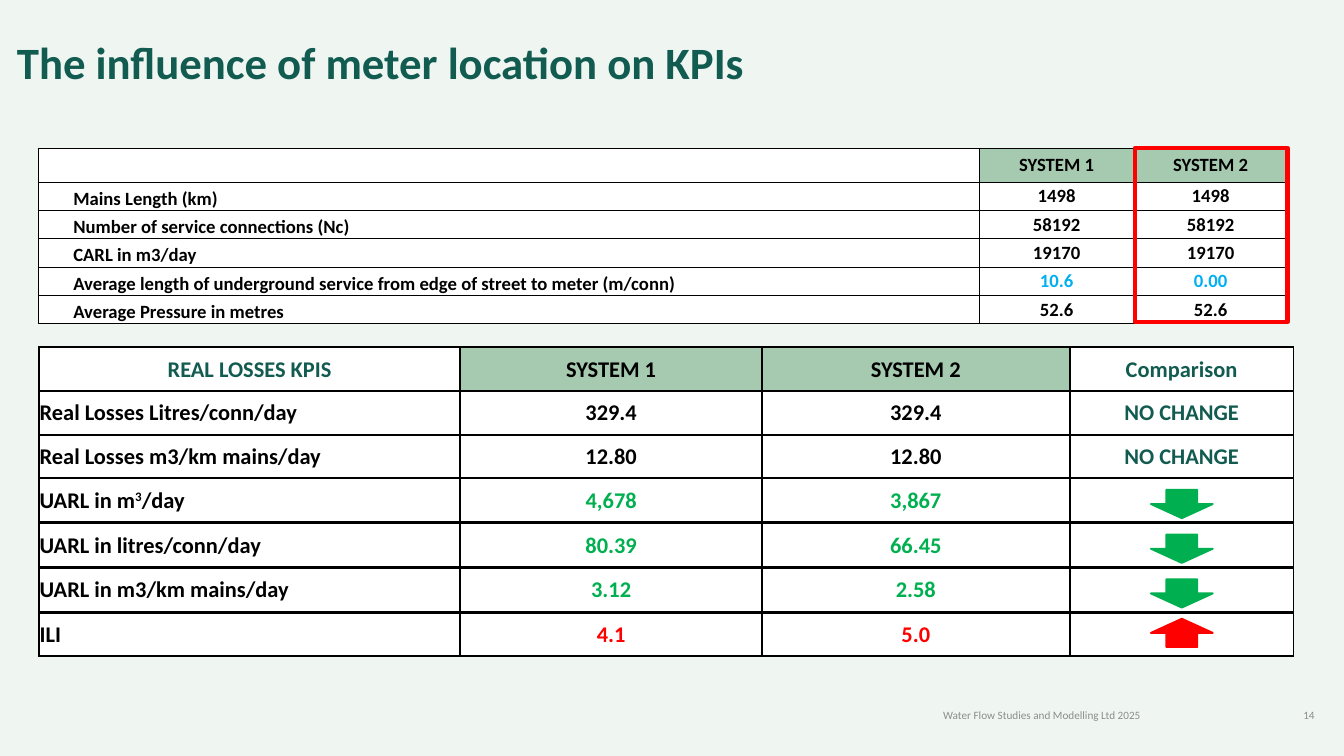
from lxml.etree import SubElement
from pptx import Presentation
from pptx.dml.color import RGBColor
from pptx.enum.shapes import MSO_SHAPE
from pptx.enum.text import MSO_ANCHOR, MSO_AUTO_SIZE, PP_ALIGN
from pptx.oxml.ns import qn
from pptx.util import Cm, Pt

DARK_GREEN, SAGE, MINT = "125B50", "A6CAB0", "EFF6F2"
GREEN, RED, BLUE = "00B050", "FF0000", "00B0F0"
BLACK, WHITE, GREY = "000000", "FFFFFF", "8C8C8C"


def rgb(code):
    return RGBColor.from_string(code)


class Deck:
    font = "Calibri"

    def __init__(self, width, height, background):
        self.presentation = Presentation()
        self.presentation.slide_width = Cm(width)
        self.presentation.slide_height = Cm(height)
        self.slide = self.presentation.slides.add_slide(self.presentation.slide_layouts[6])
        self.slide.background.fill.solid()
        self.slide.background.fill.fore_color.rgb = rgb(background)

    def style(self, paragraph, size, color, bold, align):
        paragraph.alignment = align
        paragraph.font.name = self.font
        paragraph.font.size = Pt(size)
        paragraph.font.bold = bold
        paragraph.font.color.rgb = rgb(color)

    def text(self, box, words, size, color, bold=False, align=PP_ALIGN.LEFT):
        frame = self.slide.shapes.add_textbox(*map(Cm, box)).text_frame
        frame.word_wrap = True
        frame.vertical_anchor = MSO_ANCHOR.MIDDLE
        frame.text = words
        self.style(frame.paragraphs[0], size, color, bold, align)
        return frame

    def shape(self, kind, box, line, width, fill=None, rotation=0):
        shape = self.slide.shapes.add_shape(kind, *map(Cm, box))
        shape.shadow.inherit = False
        shape.rotation = rotation
        if fill:
            shape.fill.solid()
            shape.fill.fore_color.rgb = rgb(fill)
        else:
            shape.fill.background()
        shape.line.color.rgb = rgb(line)
        shape.line.width = Pt(width)

    def borders(self, cell, width):
        properties = cell._tc.get_or_add_tcPr()
        for index, side in enumerate(("a:lnL", "a:lnR", "a:lnT", "a:lnB")):
            line = SubElement(properties, qn(side), w=str(Pt(width)))
            SubElement(SubElement(line, qn("a:solidFill")), qn("a:srgbClr"), val=BLACK)
            properties.insert(index, line)

    def table(self, left, top, widths, heights, rows, size, border, indent=0):
        """Each row is a list of (words, color, fill); ^ marks a superscript."""
        table = self.slide.shapes.add_table(
            len(heights), len(widths), Cm(left), Cm(top), Cm(sum(widths)), Cm(sum(heights))).table
        for column, width in zip(table.columns, widths):
            column.width = Cm(width)
        for r, (height, row) in enumerate(zip(heights, rows)):
            table.rows[r].height = Cm(height)
            for c, (words, color, fill) in enumerate(row):
                cell = table.cell(r, c)
                cell.fill.solid()
                cell.fill.fore_color.rgb = rgb(fill)
                self.borders(cell, border)
                cell.margin_left = cell.margin_right = cell.margin_top = Cm(0.03)
                cell.margin_bottom = 0
                label = c == 0 and r + len(rows) % 2 * 0 >= 0 and color == BLACK
                cell.vertical_anchor = MSO_ANCHOR.BOTTOM if label and indent else MSO_ANCHOR.MIDDLE
                paragraph = cell.text_frame.paragraphs[0]
                for index, part in enumerate(words.split("^")):
                    run = paragraph.add_run()
                    run.text = part
                    if index == 1:
                        run._r.get_or_add_rPr().set("baseline", "30000")
                self.style(paragraph, size, color, True,
                           PP_ALIGN.LEFT if label else PP_ALIGN.CENTER)
                if label and indent:
                    paragraph.level = 1
                    paragraph._p.get_or_add_pPr().set("marL", str(Cm(indent)))


def record(label, system_1, system_2, color=BLACK):
    return [(label, BLACK, WHITE), (system_1, color, WHITE), (system_2, color, WHITE)]


def main():
    deck = Deck(50.8, 28.58, MINT)
    left = 1.47
    systems = [("SYSTEM 1", BLACK, SAGE), ("SYSTEM 2", BLACK, SAGE)]

    # Title
    title = deck.text((0.64, 0.99, 49.53, 2.26), "The influence of meter location on KPIs",
                      48, DARK_GREEN, bold=True)
    title.margin_left = title.margin_right = title.margin_top = title.margin_bottom = 0
    title.vertical_anchor = MSO_ANCHOR.TOP
    title.auto_size = MSO_AUTO_SIZE.SHAPE_TO_FIT_TEXT
    title.paragraphs[0].line_spacing = Pt(67.2)

    # System data, with system 2 framed
    system_data = [
        [("", BLACK, WHITE)] + systems,
        record("Mains Length (km)", "1498", "1498"),
        record("Number of service connections (Nc)", "58192", "58192"),
        record("CARL in m3/day", "19170", "19170"),
        record("Average length of underground service from edge of street to meter (m/conn)",
               "10.6", "0.00", BLUE),
        record("Average Pressure in metres", "52.6", "52.6"),
    ]
    deck.table(left, 5.61, [35.56, 5.82, 5.82], [1.27] + [1.07] * 5, system_data,
               size=20, border=1, indent=1.27)
    deck.shape(MSO_SHAPE.RECTANGLE, (42.9, 5.59, 5.77, 6.58), RED, 4.5)

    # Real losses KPIs
    kpi_widths, row_height = [15.93, 11.4, 11.63, 8.46], 1.65
    no_change = [("NO CHANGE", DARK_GREEN, WHITE)]
    real_losses = [
        [("REAL LOSSES KPIS", DARK_GREEN, WHITE)] + systems + [("Comparison", DARK_GREEN, WHITE)],
        record("Real Losses Litres/conn/day", "329.4", "329.4") + no_change,
        record("Real Losses m3/km mains/day", "12.80", "12.80") + no_change,
    ]
    deck.table(left, 13.13, kpi_widths, [row_height] * 3, real_losses, size=24, border=2.25)

    # KPIs that change, one single-row table each
    changes = [
        ("UARL in m^3^/day", "4,678", "3,867", GREEN),
        ("UARL in litres/conn/day", "80.39", "66.45", GREEN),
        ("UARL in m3/km mains/day", "3.12", "2.58", GREEN),
        ("ILI", "4.1", "5.0", RED),
    ]
    tops = [18.09 + 1.69 * i for i in range(len(changes))]
    for top, change in zip(tops, changes):
        deck.table(left, top, kpi_widths, [row_height], [record(*change) + [("", BLACK, WHITE)]],
                   size=24, border=2.25)

    # Arrows: green falls, red rises
    for top, (*_, color) in zip(tops, changes):
        rises = color == RED
        deck.shape(MSO_SHAPE.DOWN_ARROW, (43.5, top + (0.23 if rises else 0.43), 2.34, 1.07),
                   color, 2, fill=color, rotation=180 if rises else 0)

    # Footer
    deck.text((35.36, 26.54, 8.05, 1.02), "Water Flow Studies and Modelling Ltd 2025",
              12, GREY, align=PP_ALIGN.CENTER)
    deck.text((44.02, 26.54, 5.92, 1.02), "14", 12, GREY, align=PP_ALIGN.RIGHT)

    deck.presentation.save("out.pptx")


if __name__ == "__main__":
    main()
